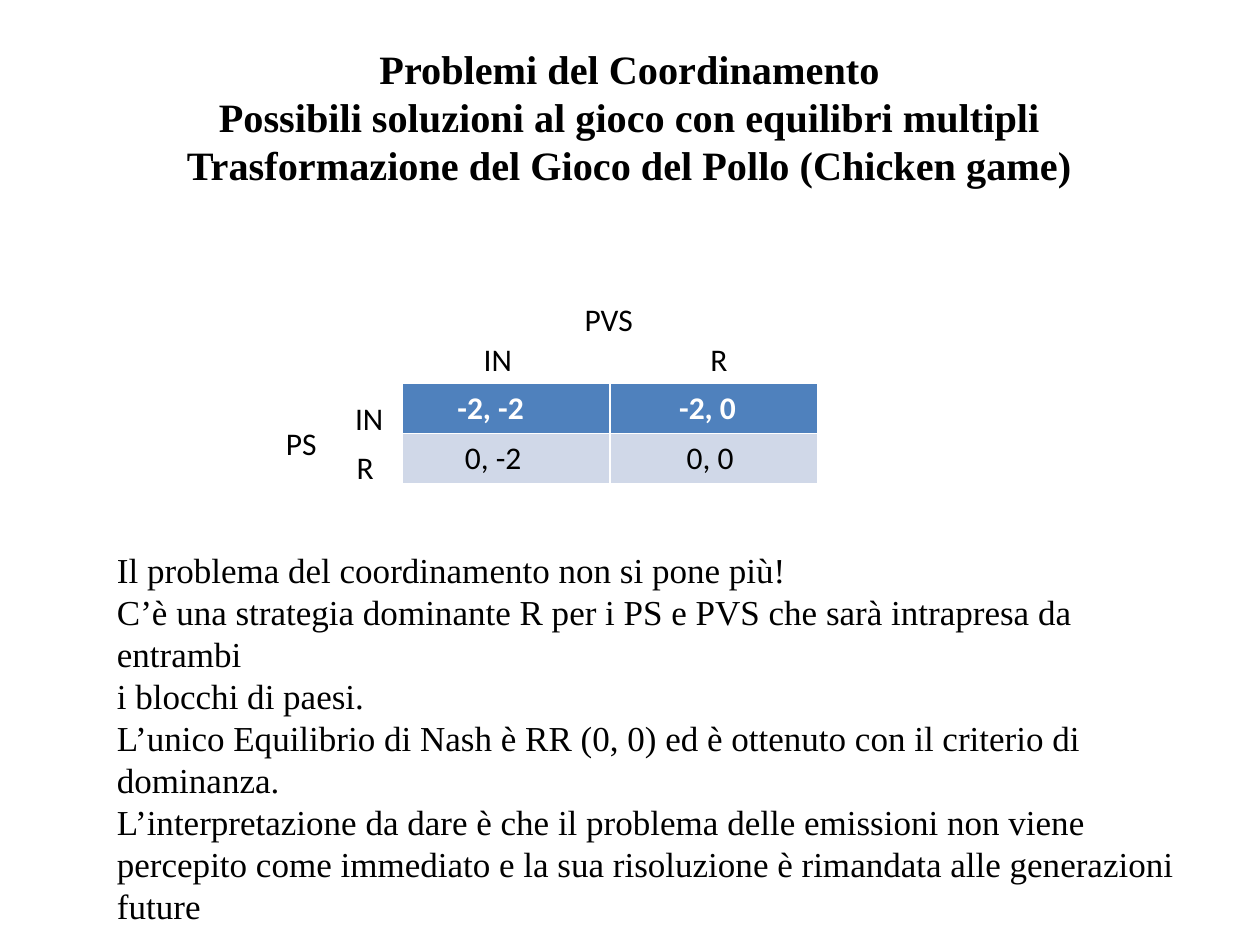
from pptx import Presentation
from pptx.dml.color import RGBColor
from pptx.enum import text
from pptx.oxml import parse_xml
from pptx.oxml.ns import nsdecls
from pptx.util import Inches, Pt

SERIF, SANS = "Times New Roman", "Calibri"
BLACK, WHITE = "000000", "FFFFFF"

TITLE = ("Problemi del Coordinamento\v"
         "Possibili soluzioni al gioco con equilibri multipli\v"
         "Trasformazione del Gioco del Pollo (Chicken game)")

# Payoff and left margin in inches, row by row
PAYOFFS = [
    [("-2, -2", 0.44), ("-2, 0", 0.55)],
    [("0, -2", 0.5), ("0, 0", 0.61)],
]
ROW_STYLES = [("4F81BD", WHITE, True), ("D0D8E8", BLACK, False)]

# Label, box (left, top, width, height), left margin, wrap
LABELS = [
    ("R", (2.56, 3.51, 0.59, 0.4), 0.27, True),
    ("IN", (2.72, 3.12, 0.43, 0.4), 0.1, False),
    ("PS", (1.77, 3.32, 0.94, 0.4), 0.5, True),
    ("IN\tR", (3.74, 2.65, 2.28, 0.4), 0.1, True),
    ("PVS", (4.37, 2.33, 1.18, 0.4), 0.27, True),
]
HEADING_TAB = 1.8

CONCLUSIONS = [
    "Il problema del coordinamento non si pone più!",
    "C’è una strategia dominante R per i PS e PVS che sarà intrapresa da entrambi",
    "i blocchi di paesi.",
    "L’unico Equilibrio di Nash è RR (0, 0) ed è ottenuto con il criterio di dominanza.",
    "L’interpretazione da dare è che il problema delle emissioni non viene percepito "
    "come immediato e la sua risoluzione è rimandata alle generazioni future",
]


def format_text(frame, font_name, size, color=BLACK, bold=False):
    for paragraph in frame.paragraphs:
        for run in paragraph.runs:
            run.font.name = font_name
            run.font.size = Pt(size)
            run.font.bold = bold
            run.font.color.rgb = RGBColor.from_string(color)


def add_text(slide, content, box, font_name, size, bold=False, wrap=True):
    frame = slide.shapes.add_textbox(*map(Inches, box)).text_frame
    frame.word_wrap = wrap
    frame.text = content
    format_text(frame, font_name, size, bold=bold)
    return frame


def add_tab(paragraph, position):
    paragraph._p.get_or_add_pPr().append(parse_xml(
        f'<a:tabLst {nsdecls("a")}><a:tab pos="{Inches(position)}" algn="l"/></a:tabLst>'))


def main():
    presentation = Presentation()
    presentation.slide_width, presentation.slide_height = Inches(10), Inches(7.5)
    slide = presentation.slides.add_slide(presentation.slide_layouts[6])

    # Title
    title = add_text(slide, TITLE, (0.5, 0.3, 9, 1.25), SERIF, 23, bold=True)
    title.vertical_anchor = text.MSO_ANCHOR.MIDDLE
    title.paragraphs[0].alignment = text.PP_ALIGN.CENTER

    # Payoff matrix
    table = slide.shapes.add_table(
        2, 2, Inches(3.19), Inches(3.04), Inches(3.3), Inches(0.8)).table
    for row, (payoffs, (fill, color, bold)) in enumerate(zip(PAYOFFS, ROW_STYLES)):
        for column, (payoff, margin) in enumerate(payoffs):
            cell = table.cell(row, column)
            cell.fill.solid()
            cell.fill.fore_color.rgb = RGBColor.from_string(fill)
            cell.margin_left = Inches(margin)
            cell.text_frame.text = payoff
            format_text(cell.text_frame, SANS, 18, color, bold)

    # Players and strategies
    for label, box, margin, wrap in LABELS:
        frame = add_text(slide, label, box, SANS, 18, wrap=wrap)
        frame.margin_left = Inches(margin)
        if "\t" in label:
            add_tab(frame.paragraphs[0], HEADING_TAB)

    # Conclusions
    add_text(slide, "\n".join(CONCLUSIONS), (0.83, 4.3, 8.74, 2.79), SERIF, 20)

    presentation.save("out.pptx")


if __name__ == "__main__":
    main()
